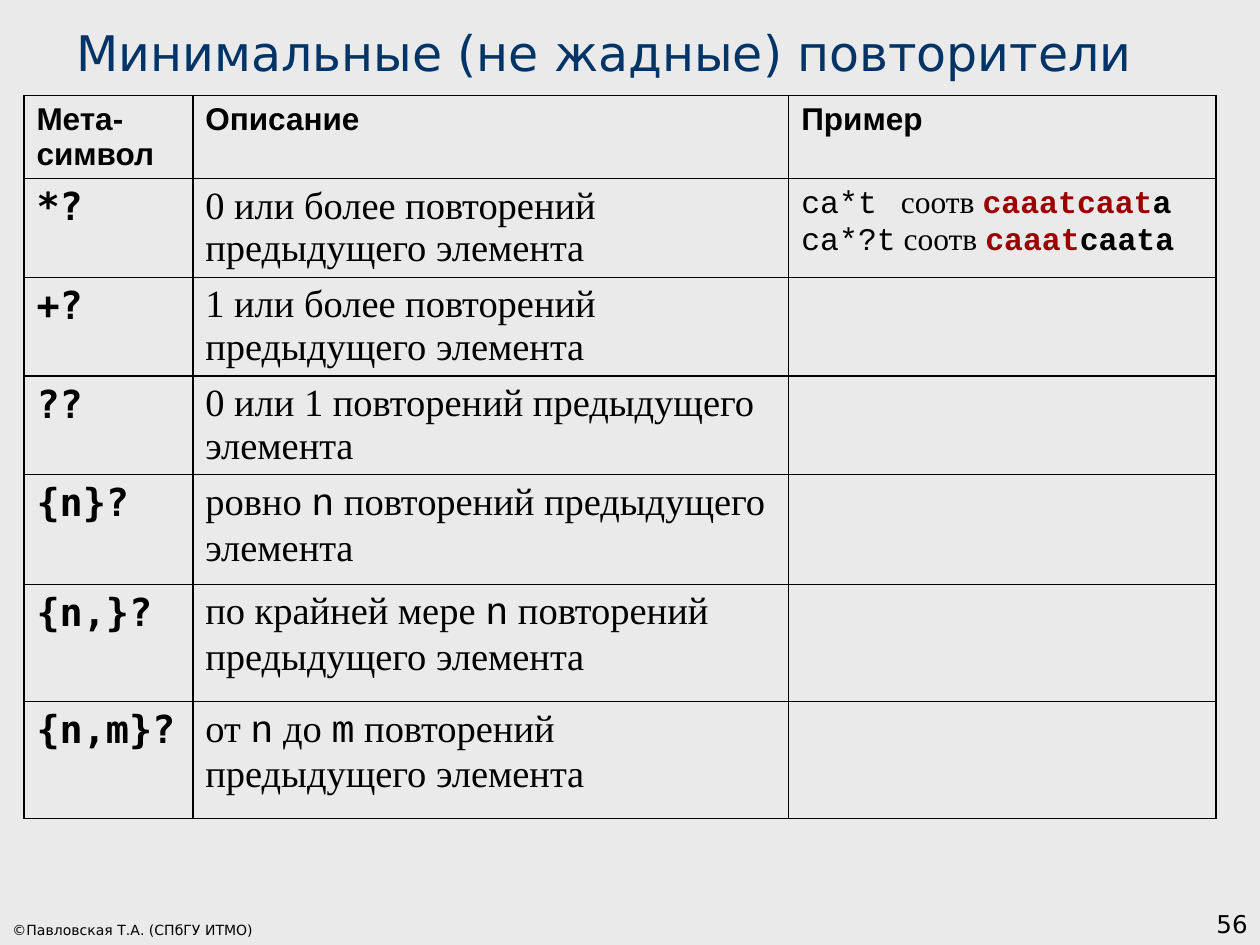
from lxml.etree import SubElement as add_node
from pptx import Presentation
from pptx.dml.color import RGBColor as Rgb
from pptx.enum.text import MSO_ANCHOR as Anchor, PP_ALIGN as Align
from pptx.oxml.ns import qn
from pptx.util import Inches, Pt

WIDTH, HEIGHT = Inches(10), Inches(7.5)
COLORS = {"page": "EAEAEA", "ink": "000000", "title": "003366", "match": "9A0000"}
STYLES = {
    "footer": {"name": "DejaVu Sans", "size": 8},
    "number": {"name": "DejaVu Sans", "size": 14},
    "title": {"name": "DejaVu Sans", "size": 28, "color": "title"},
    "head": {"name": "Arial", "size": 18, "bold": True},
    "symbol": {"name": "DejaVu Sans Mono", "size": 22, "bold": True},
    "body": {"name": "Times New Roman", "size": 22},
    "variable": {"name": "Courier New", "size": 22},
    "pattern": {"name": "Courier New", "size": 18},
    "word": {"name": "Times New Roman", "size": 18},
    "match": {"name": "Courier New", "size": 18, "bold": True, "color": "match"},
    "rest": {"name": "Courier New", "size": 18, "bold": True},
}
COLUMNS = (1.34, 4.73, 3.39)
ROWS = (0.66, 0.78, 0.78, 0.78, 0.87, 0.93, 0.93)
WORD_STOP = Inches(0.79)
HEADINGS = ("Мета-символ", "Описание", "Пример")
TAIL = " повторений предыдущего элемента"
REPEATERS = (
    ("*?", [("0 или более" + TAIL, "body")]),
    ("+?", [("1 или более" + TAIL, "body")]),
    ("??", [("0 или 1" + TAIL, "body")]),
    ("{n}?", [("ровно ", "body"), ("n", "variable"), (TAIL, "body")]),
    ("{n,}?", [("по крайней мере ", "body"), ("n", "variable"), (TAIL, "body")]),
    ("{n,m}?", [("от ", "body"), ("n", "variable"), (" до ", "body"),
                ("m", "variable"), (TAIL, "body")]),
)
EXAMPLES = (
    [("ca*t", "pattern"), ("\tсоотв ", "word"), ("caaatcaat", "match"), ("a", "rest")],
    [("ca*?t", "pattern"), (" соотв ", "word"), ("caaat", "match"), ("caata", "rest")],
)


def style_font(font, style):
    """Apply one named style to a font."""
    values = {"bold": False, **STYLES[style]}
    font.color.rgb = Rgb.from_string(COLORS[values.pop("color", "ink")])
    values["size"] = Pt(values["size"])
    for key, value in values.items():
        setattr(font, key, value)


def write_lines(frame, lines, align=Align.LEFT):
    """Write lines of (text, style) spans as paragraphs."""
    for index, line in enumerate(lines):
        para = frame.add_paragraph() if index else frame.paragraphs[0]
        para.alignment = align
        if any("\t" in text for text, _ in line):
            stops = add_node(para._p.get_or_add_pPr(), qn("a:tabLst"))
            add_node(stops, qn("a:tab"), pos=str(WORD_STOP), algn="l")
        for text, style in line:
            span = para.add_run()
            span.text = text
            style_font(span.font, style)


def place_label(page, area, text, style, align=Align.LEFT):
    """Place a bottom-anchored line of text in an area given in slide shares."""
    left, top, width, height = area
    box = page.shapes.add_textbox(int(left * WIDTH), int(top * HEIGHT),
                                  int(width * WIDTH), int(height * HEIGHT))
    frame = box.text_frame
    for key, value in {"word_wrap": True, "vertical_anchor": Anchor.BOTTOM}.items():
        setattr(frame, key, value)
    write_lines(frame, [[(text, style)]], align)


def outline_cell(cell):
    """Give a cell a clear fill, no bottom margin and thin borders."""
    cell.margin_bottom = 0
    props = cell._tc.get_or_add_tcPr()
    for side in ("lnL", "lnR", "lnT", "lnB"):
        line = add_node(props, qn("a:" + side), w=str(Pt(1)))
        fill = add_node(line, qn("a:solidFill"))
        add_node(fill, qn("a:srgbClr"), val=COLORS["ink"])
    cell.fill.background()


def place_table(page, left, top):
    """Place the table of lazy repeaters with its corner at slide shares."""
    table = page.shapes.add_table(
        len(ROWS), len(COLUMNS), int(left * WIDTH), int(top * HEIGHT),
        Inches(sum(COLUMNS)), Inches(sum(ROWS))).table
    for key in ("first_row", "horz_banding"):
        setattr(table, key, False)
    for column, width in zip(table.columns, COLUMNS):
        column.width = Inches(width)
    for row, height in zip(table.rows, ROWS):
        row.height = Inches(height)
    for cell in table.iter_cells():
        outline_cell(cell)
    for column, heading in enumerate(HEADINGS):
        write_lines(table.cell(0, column).text_frame, [[(heading, "head")]])
    for row, (symbol, description) in enumerate(REPEATERS, 1):
        write_lines(table.cell(row, 0).text_frame, [[(symbol, "symbol")]])
        write_lines(table.cell(row, 1).text_frame, [description])
    write_lines(table.cell(1, 2).text_frame, EXAMPLES)


def main():
    """Build the slide and save the deck."""
    deck = Presentation()
    deck.slide_width, deck.slide_height = WIDTH, HEIGHT
    page = deck.slides.add_slide(deck.slide_layouts[6])
    page.background.fill.solid()
    page.background.fill.fore_color.rgb = Rgb.from_string(COLORS["page"])
    place_label(page, (0, 0.962, 0.311, 0.037), "©Павловская Т.А. (СПбГУ ИТМО)", "footer")
    place_label(page, (0.792, 0.933, 0.208, 0.067), "56", "number", Align.RIGHT)
    place_label(page, (0.051, 0.017, 0.937, 0.076),
                "Минимальные (не жадные) повторители", "title")
    place_table(page, 0.019, 0.101)
    deck.save("out.pptx")


if __name__ == "__main__":
    main()
